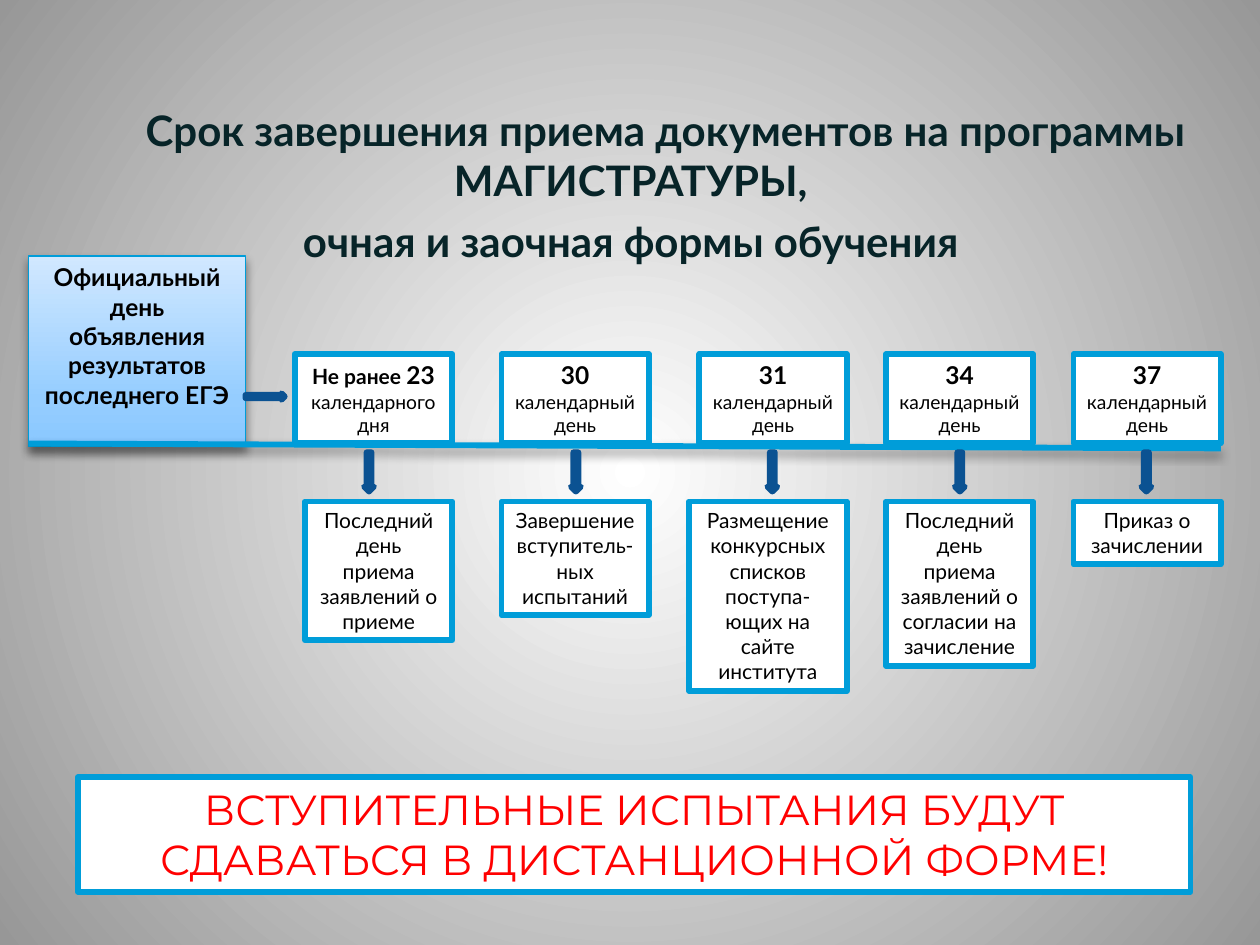
from pptx import Presentation
from pptx.dml.color import RGBColor
from pptx.enum.shapes import MSO_CONNECTOR, MSO_SHAPE
from pptx.enum.text import MSO_ANCHOR, MSO_AUTO_SIZE, PP_ALIGN
from pptx.oxml import parse_xml
from pptx.oxml.ns import nsdecls
from pptx.util import Cm, Pt

HUES = {
    "title": "072428", "text": "000000", "alert": "FF0000", "white": "FFFFFF",
    "edge": "009DD9", "arrow": "0F6FC6", "rim": "0B5292", "grey": "979797",
    "deep": "8AC8FF", "sky": "95CDFF", "pale": "D1E8FF",
}
BOLD, PLAIN = True, False
THICK = 3.35

# One column per date: arrow centre, right edge, top width, low width (cm),
# heading runs, unit, event, lines of event text
STEPS = [
    (7.44, 9.12, 3.18, 2.97, [("Не ранее ", 12), ("23", 14)], "календарного дня",
     "Последний день приема заявлений о приеме", 5),
    (11.61, 13.08, 2.97, 2.97, [("30", 14)], "календарный день",
     "Завершение вступитель-ных испытаний", 4),
    (15.57, 17.07, 2.97, 3.18, [("31", 14)], "календарный день",
     "Размещение конкурсных списков поступа-ющих на сайте института", 7),
    (19.35, 20.83, 2.97, 2.97, [("34", 14)], "календарный день",
     "Последний день приема заявлений о согласии на зачисление", 6),
    (23.11, 24.61, 2.97, 2.97, [("37", 14)], "календарный день",
     "Приказ о зачислении", 2),
]


def hue(name):
    return RGBColor.from_string(HUES[name])


def grad(stops, shade):
    """Gradient fill element from (percent, colour) stops."""
    marks = "".join(
        f'<a:gs pos="{pos * 1000}"><a:srgbClr val="{HUES[name]}"/></a:gs>'
        for pos, name in stops)
    return parse_xml(f'<a:gradFill {nsdecls("a")} rotWithShape="1">'
                     f'<a:gsLst>{marks}</a:gsLst>{shade}</a:gradFill>')


def shade(shape):
    """Soft shadow straight below a shape or line."""
    shape._element.spPr.append(parse_xml(
        f'<a:effectLst {nsdecls("a")}><a:outerShdw blurRad="{Pt(5.2)}" '
        f'dist="{Pt(3)}" dir="5400000" rotWithShape="0">'
        '<a:srgbClr val="000000"><a:alpha val="40000"/></a:srgbClr>'
        '</a:outerShdw></a:effectLst>'))


def write(para, runs, bold=PLAIN, color="text", face="Lato"):
    """Fill a centred paragraph with (text, size) runs."""
    para.alignment = PP_ALIGN.CENTER
    font = para.font
    font.name, font.bold, font.color.rgb = face, bold, hue(color)
    if len(runs) == 1:
        font.size = Pt(runs[0][1])
    for text, size in runs:
        run = para.add_run()
        run.text = text
        if len(runs) > 1:
            run.font.size = Pt(size)


def shape(slide, kind, box, fill, edge, width=THICK):
    item = slide.shapes.add_shape(kind, *map(Cm, box))
    item.fill.solid()
    item.fill.fore_color.rgb = hue(fill)
    item.line.color.rgb = hue(edge)
    item.line.width = Pt(width)
    return item


def panel(slide, box, width=THICK):
    """White frame with text starting at its top."""
    item = shape(slide, MSO_SHAPE.RECTANGLE, box, "white", "edge", width)
    item.text_frame.word_wrap = True
    item.text_frame.vertical_anchor = MSO_ANCHOR.TOP
    return item


def header(slide, box):
    title = slide.shapes.title
    title.left, title.top, title.width, title.height = map(Cm, box)
    frame = title.text_frame
    frame.word_wrap = True
    frame.auto_size = MSO_AUTO_SIZE.NONE
    frame.vertical_anchor = MSO_ANCHOR.TOP
    first, last = frame.paragraphs[0], frame.add_paragraph()
    write(first, [("Срок завершения приема документов на программы МАГИСТРАТУРЫ,",
                   24)], BOLD, "title")
    write(last, [("очная и заочная формы обучения", 24)], BOLD, "title")
    first._p.get_or_add_pPr().set("indent", str(Cm(1.4)))
    for para in (first, last):
        para.space_after = Pt(6)


def start(slide, box):
    """Shaded box that opens the timeline, with its arrow."""
    left, top, width, height = box
    item = panel(slide, box, 0.75)
    props = item._element.spPr
    fill = grad([(0, "deep"), (25, "sky"), (100, "pale")],
                '<a:lin ang="16200000" scaled="0"/>')
    props.replace(item.fill._xPr.solidFill, fill)
    shade(item)
    write(item.text_frame.paragraphs[0],
          [("Официальный день объявления результатов последнего ЕГЭ", 14)], BOLD)
    arrow = shape(slide, MSO_SHAPE.RIGHT_ARROW,
                  (left + width, top + 2.77, 0.79, 0.13), "arrow", "rim")
    arrow.shadow.inherit = False


def axis(slide, box):
    left, top, width, drop = box
    line = slide.shapes.add_connector(
        MSO_CONNECTOR.STRAIGHT, Cm(left), Cm(top), Cm(left + width), Cm(top + drop))
    line.line.color.rgb = hue("edge")
    line.line.width = Pt(THICK)
    shade(line)


def column(slide, top, step):
    """Date box, arrow and event box, flush on the right."""
    mid, right, wide, low, head, unit, event, lines = step
    date = panel(slide, (right - wide, top, wide, 1.8))
    write(date.text_frame.paragraphs[0], head, BOLD)
    write(date.text_frame.add_paragraph(), [(unit, 11)])
    arrow = shape(slide, MSO_SHAPE.DOWN_ARROW,
                  (mid - 0.1, top + 1.98, 0.2, 0.79), "arrow", "rim")
    note = panel(slide, (right - low, top + 2.97, low, 0.25 + 0.51 * lines))
    write(note.text_frame.paragraphs[0], [(event, 12)])
    for item in (date, arrow, note):
        item.shadow.inherit = False


def banner(slide, box):
    item = panel(slide, box)
    item.shadow.inherit = False
    write(item.text_frame.paragraphs[0],
          [("ВСТУПИТЕЛЬНЫЕ ИСПЫТАНИЯ БУДУТ СДАВАТЬСЯ В ДИСТАНЦИОННОЙ ФОРМЕ!", 24)],
          color="alert", face="Montserrat")


def main():
    deck = Presentation()
    deck.slide_width, deck.slide_height = Cm(25.4), Cm(19.05)
    slide = deck.slides.add_slide(deck.slide_layouts[5])

    # Background, light in the middle
    back = slide.background.fill
    back.solid()
    props = back._xPr
    props.replace(props.solidFill, grad(
        [(0, "white"), (100, "grey")],
        '<a:path path="circle"><a:fillToRect l="50000" t="50000" '
        'r="50000" b="50000"/></a:path>'))

    header(slide, (0.41, 1.98, 24.61, 4.62))
    banner(slide, (1.57, 15.67, 22.43, 2.31))

    # Timeline
    start(slide, (0.58, 5.16, 4.37, 3.84))
    axis(slide, (0.58, 8.94, 24.03, 0.1))
    for step in STEPS:
        column(slide, 7.14, step)

    deck.save("out.pptx")


if __name__ == "__main__":
    main()
